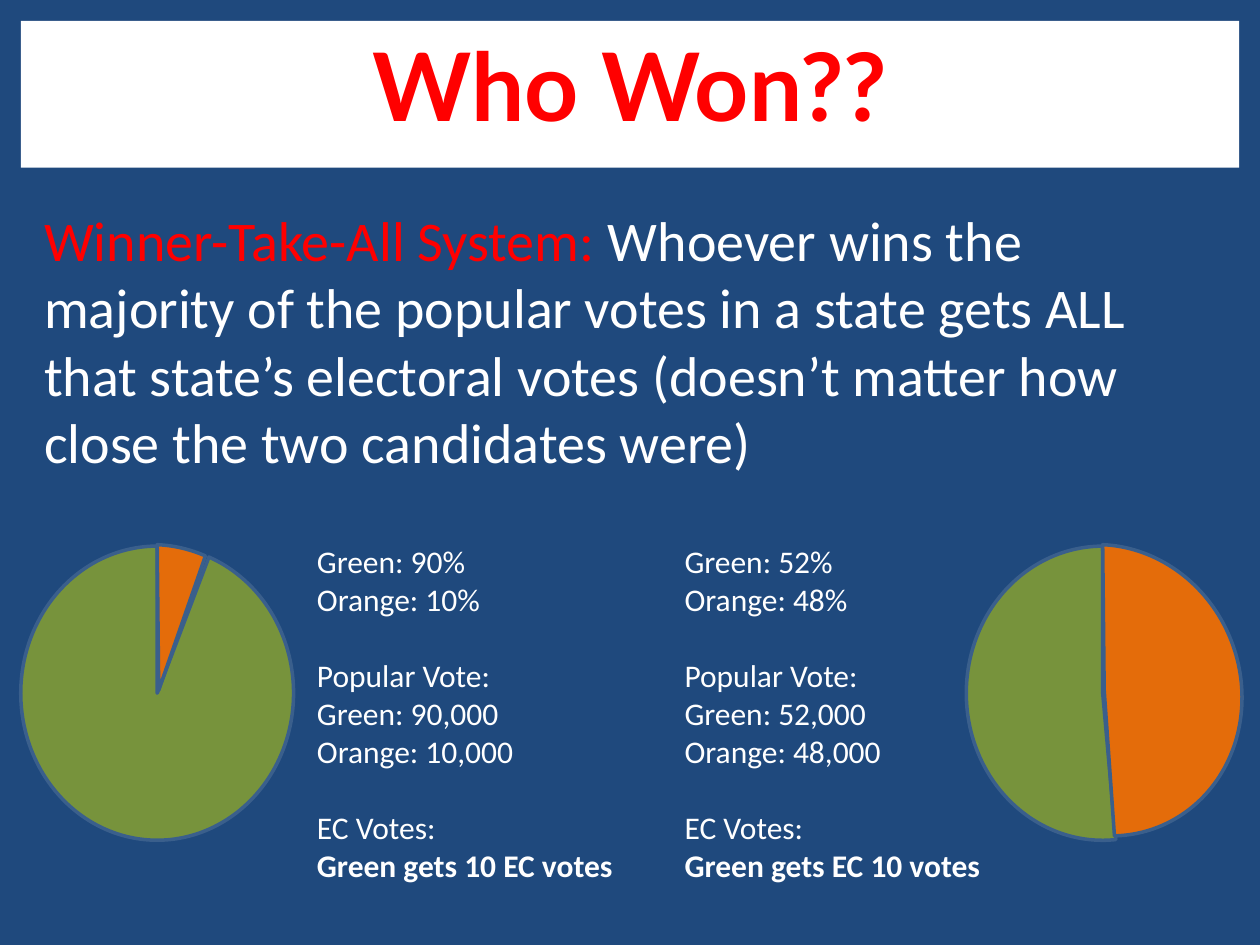
from pptx import Presentation, util as u
from pptx.dml.color import RGBColor
from pptx.enum import shapes, text

NAVY, WHITE, RED = "1F497D", "FFFFFF", "FF0000"
GREEN, ORANGE, EDGE = "77933C", "E46C0A", "3A5F8C"
TILT = -21.4


def paint(item, color):
    """Give a fill or a font a solid hex colour."""
    if hasattr(item, "solid"):
        item.solid()
        item = item.fore_color
    else:
        item = item.color
    item.rgb = RGBColor.from_string(color)


class Deck:
    """Holds the text style and the current slide."""

    def __init__(self, font, color):
        self.font, self.color = font, color
        self.prs = Presentation()
        self.prs.slide_width, self.prs.slide_height = u.Cm(25.4), u.Cm(19.05)
        self.slide = self.prs.slides.add_slide(self.prs.slide_layouts[6])
        paint(self.slide.background.fill, NAVY)

    def style(self, para, size, color=None, bold=False, font=None):
        para.font.name = font or self.font
        para.font.size = u.Pt(size)
        para.font.bold = bold
        if color:
            paint(para.font, color)

    def shape(self, kind, box, fill):
        item = self.slide.shapes.add_shape(kind, *map(u.Cm, box))
        item.shadow.inherit = False
        paint(item.fill, fill)
        return item

    def title(self, box, words):
        item = self.shape(shapes.MSO_SHAPE.RECTANGLE, box, WHITE)
        item.line.fill.background()
        item.text_frame.vertical_anchor = text.MSO_ANCHOR.TOP
        para = item.text_frame.paragraphs[0]
        para.text = words
        para.alignment = text.PP_ALIGN.CENTER
        self.style(para, 54, RED, True, "Lato")

    def frame(self, box):
        frame = self.slide.shapes.add_textbox(*map(u.Cm, box)).text_frame
        frame.word_wrap = True
        frame.auto_size = text.MSO_AUTO_SIZE.SHAPE_TO_FIT_TEXT
        return frame

    def body(self, box, parts):
        """Write one paragraph from (words, colour) pairs."""
        para = self.frame(box).paragraphs[0]
        self.style(para, 32)
        for words, color in parts:
            run = para.add_run()
            run.text = words
            paint(run.font, color)

    def column(self, box, groups):
        """Write groups of lines, a line's height apart, the last line bold."""
        frame = self.frame(box)
        para = None
        for group in groups:
            for line in group:
                first = para is None
                para = frame.paragraphs[0] if first else frame.add_paragraph()
                para.text = line
                self.style(para, 18, self.color)
                if not first and line == group[0]:
                    para.space_before = u.Pt(22)
        para.font.bold = True

    def slice(self, left, top, start, end, fill, turn=0):
        """Draw a pie slice between two angles in degrees."""
        item = self.shape(shapes.MSO_SHAPE.PIE, (left, top, 5.5, 5.93), fill)
        for i, angle in enumerate((start, end)):
            item.adjustments[i] = angle * 0.6
        item.rotation = turn
        paint(item.line.fill, EDGE)
        item.line.width = u.Pt(2)

    def pie(self, left, rest, share):
        """Draw green from angle rest, and a tilted orange slice to share."""
        self.slice(left, 11.01, rest, 270, GREEN)
        self.slice(left + 0.03, 10.95, 290.83, share, ORANGE, TILT)


def main():
    deck = Deck("Calibri", WHITE)
    deck.title((0.42, 0.42, 24.56, 2.96), "Who Won??")
    deck.body((0.64, 4.02, 24.13, 5.74), [
        ("Winner-Take-All System: ", RED),
        ("Whoever wins the majority of the popular votes in a state gets ALL "
         "that state’s electoral votes (doesn’t matter how close the two "
         "candidates were)", WHITE)])
    states = [
        (0.42, 290.83, 310.6, 6.14, 90, "Green gets 10 EC votes"),
        (19.48, 84.88, 107.34, 13.55, 52, "Green gets EC 10 votes")]
    for left, rest, share, col, green, result in states:
        orange = 100 - green
        deck.pie(left, rest, share)
        deck.column((col, 10.8, 6.56, 7.2), [
            (f"Green: {green}%", f"Orange: {orange}%"),
            ("Popular Vote:", f"Green: {green},000", f"Orange: {orange},000"),
            ("EC Votes:", result)])
    deck.prs.save("out.pptx")


if __name__ == "__main__":
    main()
